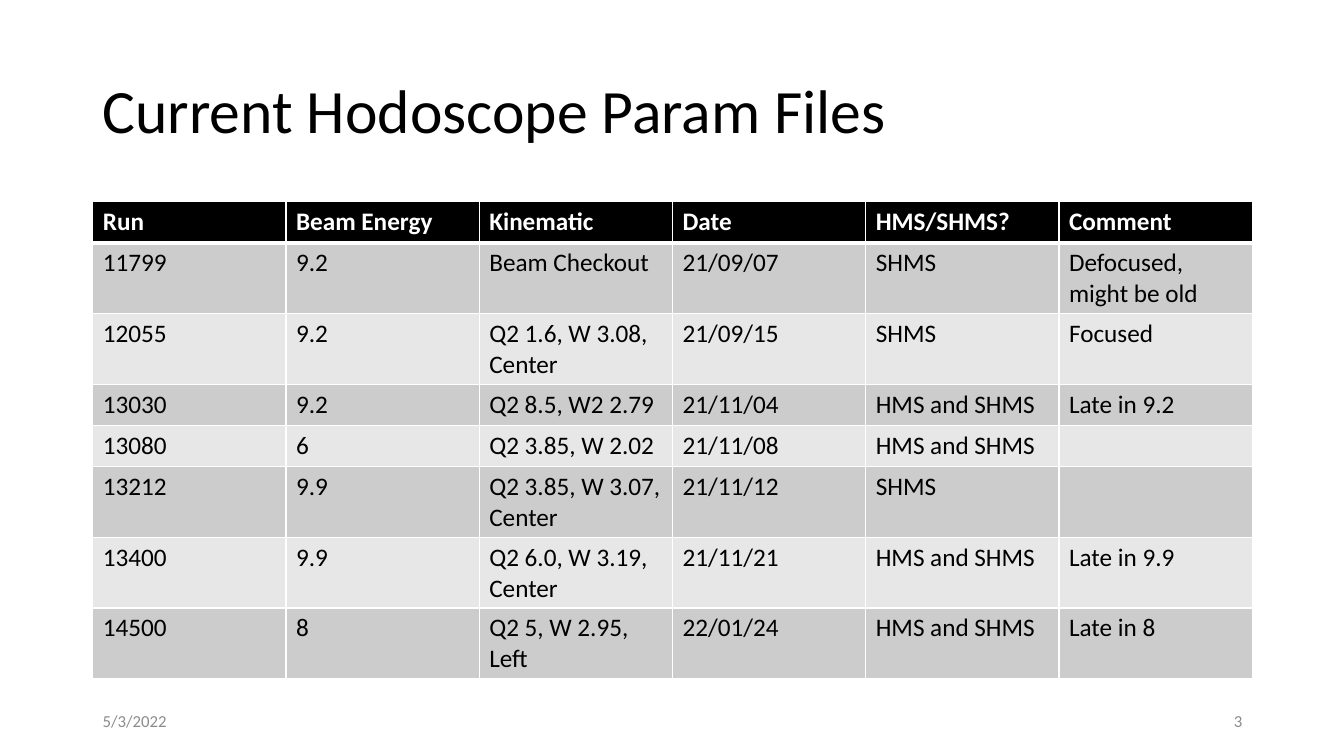
import pptx
import pptx.util
from lxml import etree
from pptx.dml.color import RGBColor
from pptx.enum.text import MSO_ANCHOR, PP_ALIGN
from pptx.oxml.ns import qn
from pptx.util import Inches

# Content
TITLE = "Current Hodoscope Param Files"
DATE = "5/3/2022"
PAGE_NUMBER = "3"
ROWS = [
    ("Run", "Beam Energy", "Kinematic", "Date", "HMS/SHMS?", "Comment"),
    ("11799", "9.2", "Beam Checkout", "21/09/07", "SHMS", "Defocused, might be old"),
    ("12055", "9.2", "Q2 1.6, W 3.08, Center", "21/09/15", "SHMS", "Focused"),
    ("13030", "9.2", "Q2 8.5, W2 2.79", "21/11/04", "HMS and SHMS", "Late in 9.2"),
    ("13080", "6", "Q2 3.85, W 2.02", "21/11/08", "HMS and SHMS", ""),
    ("13212", "9.9", "Q2 3.85, W 3.07, Center", "21/11/12", "SHMS", ""),
    ("13400", "9.9", "Q2 6.0, W 3.19, Center", "21/11/21", "HMS and SHMS", "Late in 9.9"),
    ("14500", "8", "Q2 5, W 2.95, Left", "22/01/24", "HMS and SHMS", "Late in 8"),
]

# Style
FONT = "Calibri"
BLACK = RGBColor(0x00, 0x00, 0x00)
WHITE = RGBColor(0xFF, 0xFF, 0xFF)
DARK_BAND = RGBColor(0xCC, 0xCC, 0xCC)
LIGHT_BAND = RGBColor(0xE7, 0xE7, 0xE7)
FOOTER_GRAY = RGBColor(0x8C, 0x8C, 0x8C)

# Layout in inches
LEFT, WIDTH = 0.92, 11.5
TABLE_TOP, ROW_HEIGHT = 2, 0.41
FOOTER_TOP, FOOTER_WIDTH, FOOTER_HEIGHT = 6.95, 3, 0.4


def write_text(frame, text, size=18, color=BLACK, bold=False,
               align=PP_ALIGN.LEFT, spacing=None):
    paragraph = frame.paragraphs[0]
    paragraph.alignment = align
    paragraph.line_spacing = spacing
    font = paragraph.font
    if text:
        run = paragraph.add_run()
        run.text = text
        font = run.font
    font.name = FONT
    font.size = pptx.util.Pt(size)
    font.bold = bold
    font.color.rgb = color


def add_text_box(slide, text, left, top, width, height, **text_format):
    box = slide.shapes.add_textbox(Inches(left), Inches(top), Inches(width), Inches(height))
    box.text_frame.word_wrap = True
    box.text_frame.vertical_anchor = MSO_ANCHOR.MIDDLE
    write_text(box.text_frame, text, **text_format)


def set_borders(cell, widths):
    """Give the cell white left, right, top and bottom lines, widths in points."""
    properties = cell._tc.get_or_add_tcPr()
    for position, (side, width) in enumerate(zip("LRTB", widths)):
        line = etree.Element(qn(f"a:ln{side}"), w=str(pptx.util.Pt(width)))
        fill = etree.SubElement(line, qn("a:solidFill"))
        etree.SubElement(fill, qn("a:srgbClr"), val=str(WHITE))
        properties.insert(position, line)


def add_run_table(slide):
    column_count = len(ROWS[0])
    table = slide.shapes.add_table(
        len(ROWS), column_count, Inches(LEFT), Inches(TABLE_TOP),
        Inches(WIDTH), Inches(ROW_HEIGHT * len(ROWS))).table
    for column in table.columns:
        column.width = Inches(WIDTH / column_count)
    for row_index, row in enumerate(ROWS):
        table.rows[row_index].height = Inches(ROW_HEIGHT)
        header = row_index == 0
        band = BLACK if header else DARK_BAND if row_index % 2 else LIGHT_BAND
        top_width = 3 if row_index == 1 else 1
        bottom_width = 3 if header else 1
        for column_index, text in enumerate(row):
            cell = table.cell(row_index, column_index)
            cell.fill.solid()
            cell.fill.fore_color.rgb = band
            set_borders(cell, (1, 1, top_width, bottom_width))
            write_text(cell.text_frame, text, bold=header, color=WHITE if header else BLACK)


def main():
    presentation = pptx.Presentation()
    presentation.slide_width = Inches(13.33)
    presentation.slide_height = Inches(7.5)
    slide = presentation.slides.add_slide(presentation.slide_layouts[6])

    # Title
    add_text_box(slide, TITLE, LEFT, 0.4, WIDTH, 1.45, size=44, spacing=0.9)

    # Table
    add_run_table(slide)

    # Footer
    add_text_box(slide, DATE, LEFT, FOOTER_TOP, FOOTER_WIDTH, FOOTER_HEIGHT,
                 size=12, color=FOOTER_GRAY)
    add_text_box(slide, PAGE_NUMBER, LEFT + WIDTH - FOOTER_WIDTH, FOOTER_TOP,
                 FOOTER_WIDTH, FOOTER_HEIGHT, size=12, color=FOOTER_GRAY,
                 align=PP_ALIGN.RIGHT)

    presentation.save("out.pptx")


if __name__ == "__main__":
    main()
